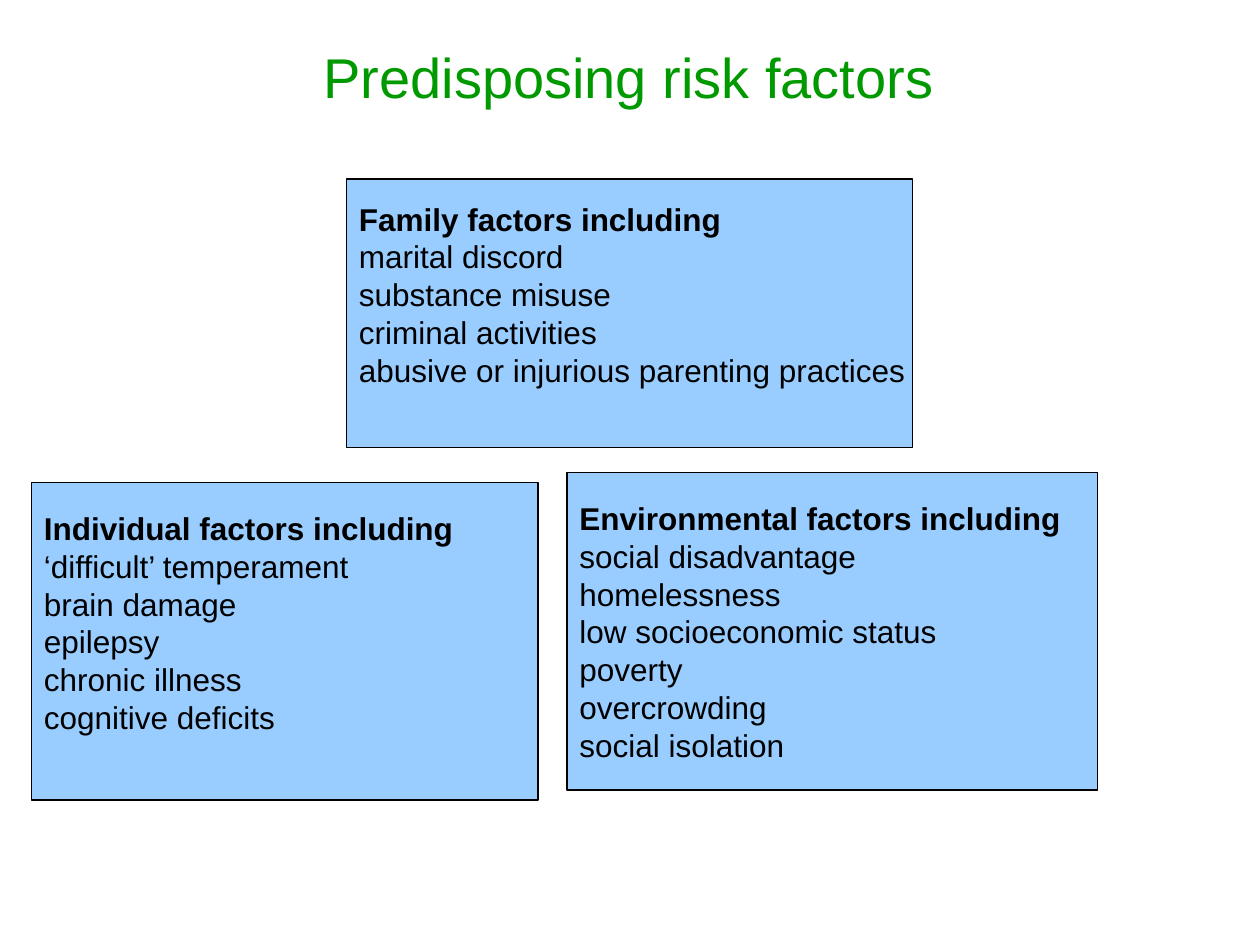
import pptx
import pptx.util
import pptx.dml.color
import pptx.enum.shapes
import pptx.enum.text

Inches = pptx.util.Inches
Pt = pptx.util.Pt
RGBColor = pptx.dml.color.RGBColor
ALIGN = pptx.enum.text.PP_ALIGN
MIDDLE = pptx.enum.text.MSO_ANCHOR.MIDDLE

GREEN = RGBColor(0x00, 0x99, 0x00)
LIGHT_BLUE = RGBColor(0x99, 0xCC, 0xFF)
BLACK = RGBColor(0x00, 0x00, 0x00)

FACTOR_BOXES = [
    (2.75, 1.42, 4.49, 2.13, 0.35, [
        "Family factors including", "marital discord", "substance misuse",
        "criminal activities", "abusive or injurious parenting practices"]),
    (4.5, 3.75, 4.21, 2.52, 0.05, [
        "Environmental factors including", "social disadvantage",
        "homelessness", "low socioeconomic status", "poverty",
        "overcrowding", "social isolation"]),
    (0.25, 3.83, 4.02, 2.52, 0.35, [
        "Individual factors including", "‘difficult’ temperament",
        "brain damage", "epilepsy", "chronic illness", "cognitive deficits"]),
]


class RiskSlide:
    font_name = "Arial"
    title_size = Pt(32)
    body_size = Pt(18)

    def __init__(self, presentation):
        self.slide = presentation.slides.add_slide(presentation.slide_layouts[6])

    def format_paragraph(self, paragraph, size, color, alignment, bold=False):
        paragraph.alignment = alignment
        for run in paragraph.runs:
            run.font.name = self.font_name
            run.font.size = size
            run.font.color.rgb = color
            run.font.bold = bold

    def add_title(self, text, left, top, width, height):
        shape = self.slide.shapes.add_textbox(
            Inches(left), Inches(top), Inches(width), Inches(height))
        text_frame = shape.text_frame
        text_frame.word_wrap = True
        text_frame.vertical_anchor = MIDDLE
        text_frame.text = text
        self.format_paragraph(
            text_frame.paragraphs[0], self.title_size, GREEN, ALIGN.CENTER)

    def add_factor_box(self, left, top, width, height, bottom_margin, lines):
        shape = self.slide.shapes.add_shape(
            pptx.enum.shapes.MSO_SHAPE.RECTANGLE,
            Inches(left), Inches(top), Inches(width), Inches(height))
        shape.shadow.inherit = False
        shape.fill.solid()
        shape.fill.fore_color.rgb = LIGHT_BLUE
        shape.line.color.rgb = BLACK
        shape.line.width = Pt(0.75)
        text_frame = shape.text_frame
        text_frame.word_wrap = False
        text_frame.vertical_anchor = MIDDLE
        text_frame.margin_bottom = Inches(bottom_margin)
        text_frame.text = "\n".join(lines)
        for index, paragraph in enumerate(text_frame.paragraphs):
            self.format_paragraph(
                paragraph, self.body_size, BLACK, ALIGN.LEFT, bold=index == 0)


def main():
    presentation = pptx.Presentation()
    presentation.slide_width = Inches(10)
    presentation.slide_height = Inches(7.5)
    risk_slide = RiskSlide(presentation)
    risk_slide.add_title("Predisposing risk factors", 1.25, 0.17, 7.48, 0.87)
    for factor_box in FACTOR_BOXES:
        risk_slide.add_factor_box(*factor_box)
    presentation.save("out.pptx")


if __name__ == "__main__":
    main()
